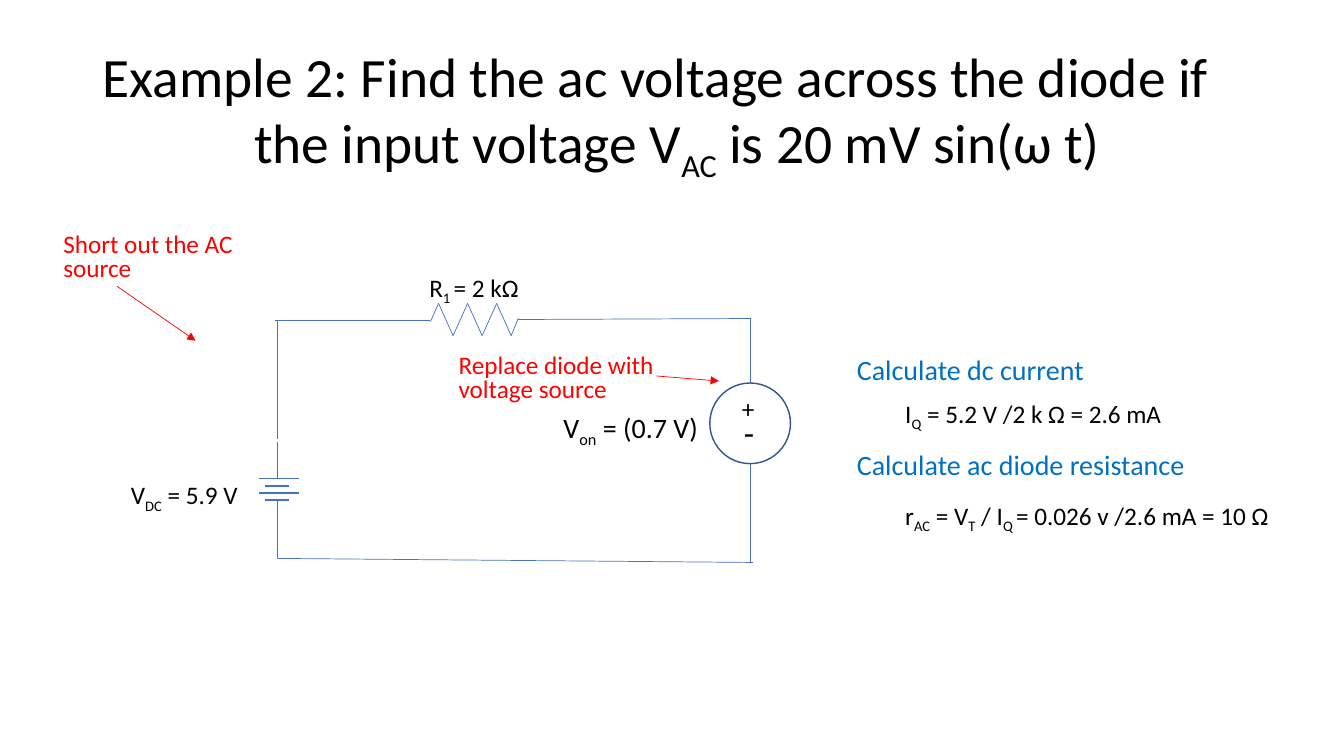
"""Build a slide that works out the ac voltage across a diode in a circuit."""
from itertools import pairwise

from lxml.etree import SubElement
from pptx import Presentation
from pptx.dml.color import RGBColor
from pptx.enum.shapes import MSO_CONNECTOR, MSO_SHAPE
from pptx.enum.text import MSO_ANCHOR, MSO_AUTO_SIZE, PP_ALIGN
from pptx.oxml.ns import qn
from pptx.util import Inches, Pt

BLACK = RGBColor(0, 0, 0)
WHITE = RGBColor(255, 255, 255)
RED = RGBColor(255, 0, 0)
BLUE = RGBColor(0x00, 0x70, 0xC0)
WIRE = RGBColor(0x44, 0x72, 0xC4)
NAVY = RGBColor(0x32, 0x54, 0x91)


def write(shape, text, size=18, color=BLACK, spacing=1.0, before=0):
    """Fill a shape with text in which |bars| enclose subscripts."""
    frame = shape.text_frame
    frame.word_wrap = True
    frame.auto_size = MSO_AUTO_SIZE.NONE
    para = frame.paragraphs[0]
    para.alignment = PP_ALIGN.LEFT
    para.line_spacing = spacing
    para.space_before = Pt(before)
    for i, part in enumerate(text.split("|")):
        run = para.add_run()
        run.text = part
        run.font.name = "Calibri"
        run.font.size = Pt(size)
        run.font.color.rgb = color
        if i % 2:
            run.font._element.set("baseline", "-25000")
    return para


def draw(start, end, color=WIRE, width=0.5, arrow=False):
    """Draw a straight line between two points given in inches."""
    ends = [Inches(v) for v in (*start, *end)]
    line = slide.shapes.add_connector(MSO_CONNECTOR.STRAIGHT, *ends)
    line.line.color.rgb = color
    line.line.width = Pt(width)
    if arrow:
        SubElement(line.line._get_or_add_ln(), qn("a:tailEnd"), type="triangle")
    SubElement(line._element.spPr, qn("a:effectLst"))


deck = Presentation()
deck.slide_width = Inches(13.33)
deck.slide_height = Inches(7.5)
slide = deck.slides.add_slide(deck.slide_layouts[5])

title = slide.shapes.title
title.left, title.top = Inches(0.92), Inches(0.4)
title.width, title.height = Inches(11.5), Inches(1.45)
title.text_frame.vertical_anchor = MSO_ANCHOR.MIDDLE
head = write(
    title,
    "Example 2: Find the ac voltage across the diode if "
    "the input voltage V|AC| is 20 mV sin(ω t)",
    size=39.6,
    spacing=0.9,
)
props = head._p.get_or_add_pPr()
props.set("marL", str(Inches(1.5)))
props.set("indent", str(Inches(-1.5)))

wires = [
    ((2.73, 3.18), (4.27, 3.18)),
    ((5.14, 3.17), (7.45, 3.16)),
    ((2.75, 3.17), (2.75, 4.36)),
    ((2.75, 4.39), (2.75, 4.74)),
    ((2.75, 4.96), (2.75, 5.54)),
    ((2.75, 5.54), (7.47, 5.58)),
    ((7.44, 3.15), (7.44, 3.8)),
    ((7.44, 4.6), (7.44, 5.59)),
]
peaks = [(4.35 + 0.144 * i, 3.33 if i % 2 else 3.01) for i in range(6)]
zigzag = [(4.27, 3.19), *peaks, (5.14, 3.16)]
for start, end in [*wires, *pairwise(zigzag)]:
    draw(start, end)

for i in range(4):
    half = 0.12 if i % 2 else 0.2
    y = 4.75 + 0.07 * i
    draw((2.77 - half if half == 0.2 else 2.63, y), (2.75 + half if half == 0.12 else 2.97, y), width=1)

source = slide.shapes.add_shape(
    MSO_SHAPE.OVAL, Inches(7.04), Inches(3.8), Inches(0.8), Inches(0.8)
)
source.shadow.inherit = False
source.fill.solid()
source.fill.fore_color.rgb = WHITE
source.line.color.rgb = NAVY
source.line.width = Pt(1)

draw((6.51, 3.73), (7.13, 3.78), color=RED, arrow=True)
draw((1.16, 2.84), (1.94, 3.38), color=RED, arrow=True)

note = dict(color=RED, spacing=0.8, before=10)
step = dict(size=20, color=BLUE)
labels = [
    (1.2, 4.71, 1.36, 0.4, "V|DC| = 5.9 V", {}),
    (4.16, 2.65, 1.73, 0.4, "R|1 |= 2 kΩ", {}),
    (5.49, 4.03, 1.78, 0.61, "V|on| = (0.7 V)", dict(size=20, spacing=0.9, before=10)),
    (7.26, 3.85, 0.36, 0.4, "+", {}),
    (7.28, 4.04, 0.36, 0.5, "-", dict(size=24)),
    (0.53, 2.27, 2.34, 0.61, "Short out the AC source", note),
    (4.45, 3.47, 2.34, 0.61, "Replace diode with voltage source", note),
    (8.4, 3.45, 3.14, 0.44, "Calculate dc current", step),
    (8.88, 3.9, 3.12, 0.4, "I|Q| = 5.2 V /2 k Ω = 2.6 mA", {}),
    (8.4, 4.39, 3.97, 0.44, "Calculate ac diode resistance", step),
    (8.88, 4.91, 4.11, 0.4, "r|AC| = V|T| / I|Q |= 0.026 v /2.6 mA = 10 Ω", {}),
]
for *place, text, style in labels:
    box = slide.shapes.add_textbox(*[Inches(v) for v in place])
    write(box, text, **style)

deck.save("out.pptx")
